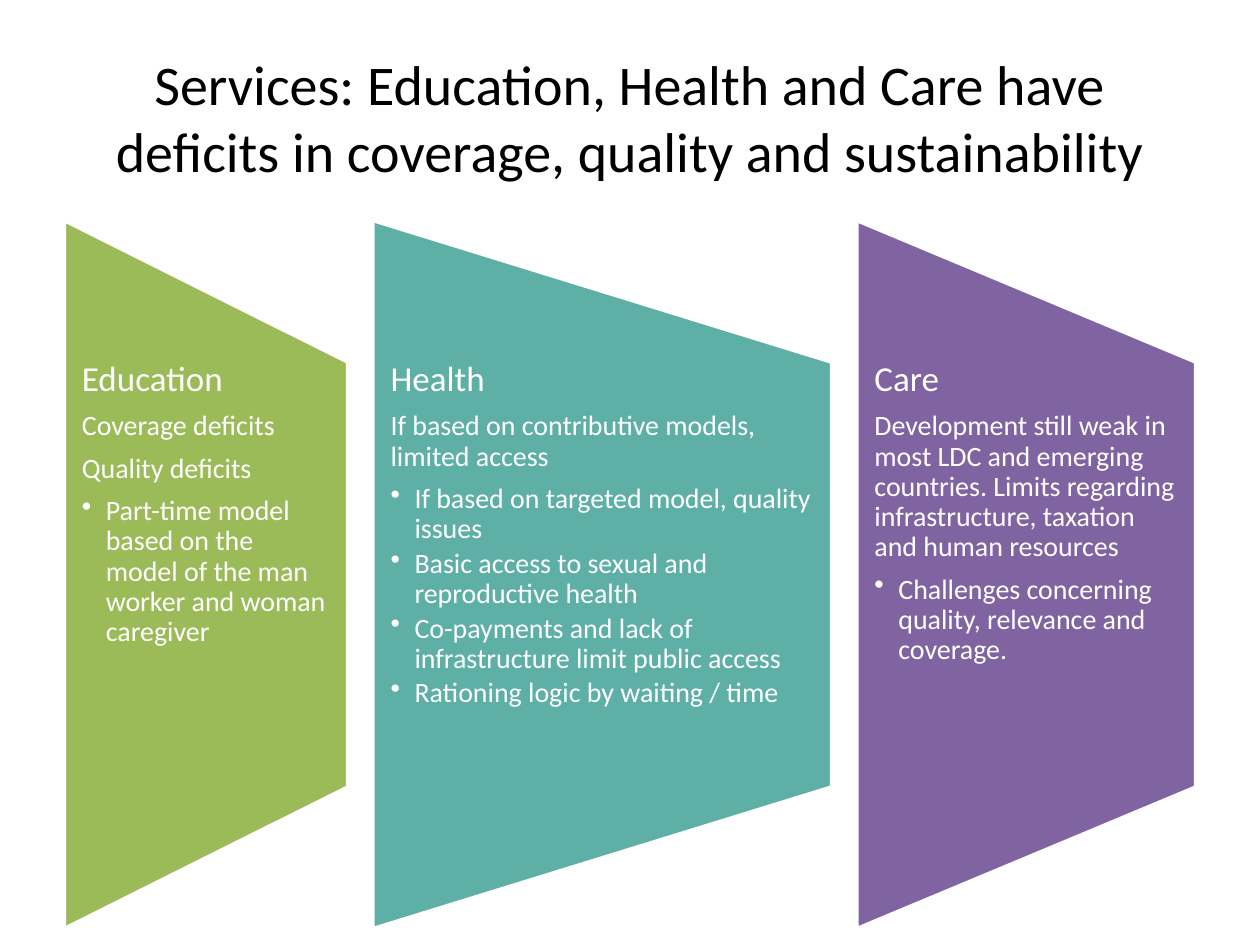
from lxml import etree
from pptx import Presentation
from pptx import util as u
from pptx.dml.color import RGBColor
from pptx.enum import shapes, text
from pptx.oxml.ns import qn

BLACK = RGBColor(0x00, 0x00, 0x00)
WHITE = RGBColor(0xFF, 0xFF, 0xFF)
GREEN = RGBColor(0x9B, 0xBB, 0x59)
TEAL = RGBColor(0x5E, 0xAF, 0xA6)
PURPLE = RGBColor(0x80, 0x64, 0xA2)

TITLE = "Services: Education, Health and Care have deficits in coverage, quality and sustainability"
LEFT, GAP = 0.51, 0.2
PANEL_TOP, PANEL_HEIGHT = 1.75, 5.62
TEXT_TOP, TEXT_HEIGHT = 2.87, 3.37

PANELS = [
    (2.25, GREEN, "Education",
     ["Coverage deficits", "Quality deficits"],
     ["Part-time model based on the model of the man worker and woman caregiver"]),
    (3.64, TEAL, "Health",
     ["If based on contributive models, limited access"],
     ["If based on targeted model, quality issues",
      "Basic access to sexual and reproductive health",
      "Co-payments and lack of infrastructure limit public access",
      "Rationing logic by waiting / time"]),
    (2.69, PURPLE, "Care",
     ["Development still weak in most LDC and emerging countries. "
      "Limits regarding infrastructure, taxation and human resources"],
     ["Challenges concerning quality, relevance and coverage."]),
]


class SlideBuilder:
    """Draws the elements of one slide in a shared style."""

    font = "Calibri"

    def __init__(self, slide):
        self.slide = slide

    def add_run(self, paragraph, words, size, color):
        run = paragraph.add_run()
        run.text = words
        run.font.name = self.font
        run.font.size = u.Pt(size)
        run.font.color.rgb = color

    def add_title(self, words):
        box = self.slide.shapes.add_textbox(
            u.Inches(0.5), u.Inches(0.3), u.Inches(9), u.Inches(1.25))
        frame = box.text_frame
        frame.word_wrap = True
        frame.vertical_anchor = text.MSO_ANCHOR.MIDDLE
        paragraph = frame.paragraphs[0]
        paragraph.alignment = text.PP_ALIGN.CENTER
        self.add_run(paragraph, words, 32, BLACK)

    def add_panel(self, left, width, color):
        shape = self.slide.shapes.add_shape(
            shapes.MSO_SHAPE.FLOWCHART_MANUAL_OPERATION,
            u.Inches(left + (width - PANEL_HEIGHT) / 2),
            u.Inches(PANEL_TOP + (PANEL_HEIGHT - width) / 2),
            u.Inches(PANEL_HEIGHT), u.Inches(width))
        shape.rotation = 270
        shape.shadow.inherit = False
        shape.fill.solid()
        shape.fill.fore_color.rgb = color
        shape.line.color.rgb = WHITE
        shape.line.width = u.Pt(2)

    def add_panel_text(self, left, width, heading, statements, bullets):
        box = self.slide.shapes.add_textbox(
            u.Inches(left), u.Inches(TEXT_TOP), u.Inches(width), u.Inches(TEXT_HEIGHT))
        frame = box.text_frame
        frame.word_wrap = True
        frame.margin_left = frame.margin_right = u.Inches(0.14)
        frame.margin_top = frame.margin_bottom = 0
        heading_paragraph = frame.paragraphs[0]
        self.style_paragraph(heading_paragraph, 7)
        self.add_run(heading_paragraph, heading, 20, WHITE)
        for words in statements:
            paragraph = frame.add_paragraph()
            self.style_paragraph(paragraph, 7)
            self.add_run(paragraph, words, 16, WHITE)
        for words in bullets:
            paragraph = frame.add_paragraph()
            self.style_paragraph(paragraph, 2.5)
            self.add_bullet(paragraph)
            self.add_run(paragraph, words, 16, WHITE)

    def style_paragraph(self, paragraph, space_after):
        paragraph.alignment = text.PP_ALIGN.LEFT
        paragraph.line_spacing = 0.9
        paragraph.space_after = u.Pt(space_after)

    def add_bullet(self, paragraph):
        properties = paragraph._p.get_or_add_pPr()
        properties.set("lvl", "1")
        properties.set("marL", str(u.Inches(0.19)))
        properties.set("indent", str(-u.Inches(0.19)))
        etree.SubElement(properties, qn("a:buChar")).set("char", "•")


def main():
    presentation = Presentation()
    presentation.slide_width = u.Inches(10)
    presentation.slide_height = u.Inches(7.5)
    builder = SlideBuilder(presentation.slides.add_slide(presentation.slide_layouts[6]))
    builder.add_title(TITLE)
    left = LEFT
    for width, color, heading, statements, bullets in PANELS:
        builder.add_panel(left, width, color)
        builder.add_panel_text(left, width, heading, statements, bullets)
        left += width + GAP
    presentation.save("out.pptx")


if __name__ == "__main__":
    main()
